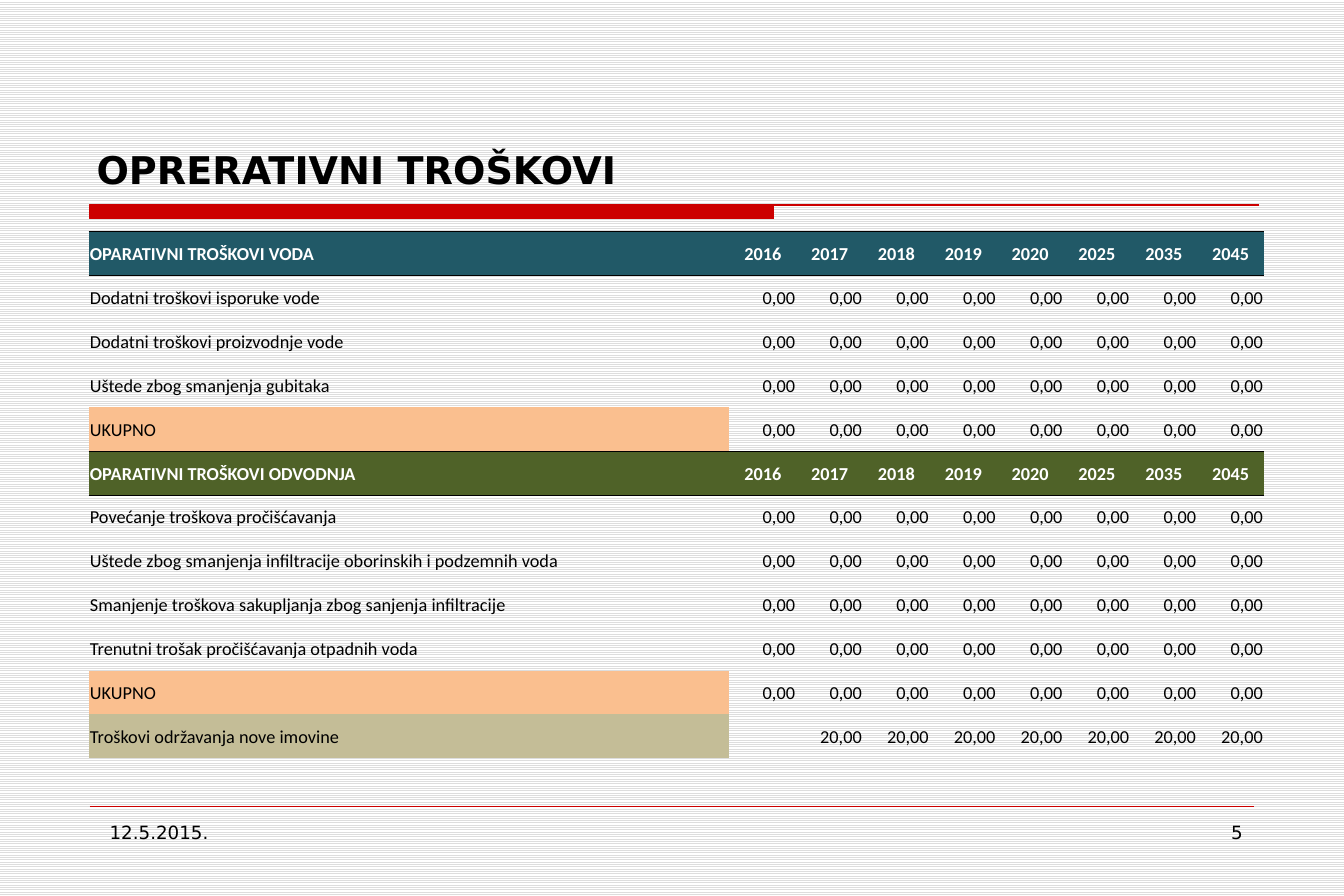
from lxml.etree import SubElement as Sub
from pptx import Presentation as Deck
from pptx.dml.color import RGBColor as Rgb
from pptx.enum.dml import MSO_PATTERN as Pat
from pptx.enum.shapes import MSO_CONNECTOR as Conn
from pptx.enum.text import MSO_ANCHOR as Anchor, PP_ALIGN as Align
from pptx.oxml import parse_xml
from pptx.oxml.ns import nsdecls, qn
from pptx.util import Inches, Pt

WIDE, HIGH = Inches(11.25), Inches(7.5)
HUES = {
    "black": "000000", "white": "FFFFFF", "grey": "DDDDDD", "red": "CC0000",
    "teal": "215967", "green": "4F6228", "peach": "FABF8F", "sand": "C4BD97",
}
SANS, BODY = "DejaVu Sans", "Calibri"

YEARS = ["2016", "2017", "2018", "2019", "2020", "2025", "2035", "2045"]
ZEROS = ["0,00"] * len(YEARS)
COSTS = [""] + ["20,00"] * (len(YEARS) - 1)
# Label, values, fill of the label; a header fills its whole row
ROWS = [
    ("OPARATIVNI TROŠKOVI VODA", YEARS, "teal"),
    ("Dodatni troškovi isporuke vode", ZEROS, None),
    ("Dodatni troškovi proizvodnje vode", ZEROS, None),
    ("Uštede zbog smanjenja gubitaka", ZEROS, None),
    ("UKUPNO", ZEROS, "peach"),
    ("OPARATIVNI TROŠKOVI ODVODNJA", YEARS, "green"),
    ("Povećanje troškova pročišćavanja", ZEROS, None),
    ("Uštede zbog smanjenja infiltracije oborinskih i podzemnih voda", ZEROS, None),
    ("Smanjenje troškova sakupljanja zbog sanjenja infiltracije", ZEROS, None),
    ("Trenutni trošak pročišćavanja otpadnih voda", ZEROS, None),
    ("UKUPNO", ZEROS, "peach"),
    ("Troškovi održavanja nove imovine", COSTS, "sand"),
]


def hue(name):
    return Rgb.from_string(HUES[name])


def area(left, top, width, height):
    """Turn percentages of the slide into lengths."""
    return [round(part * side / 100) for part, side in
            zip((left, top, width, height), (WIDE, HIGH, WIDE, HIGH))]


def apply(item, form):
    for key, value in form.items():
        setattr(item, key, value)


def write(frame, text, size, face, color="black", bold=False, align=Align.LEFT):
    para = frame.paragraphs[0]
    para.alignment = align
    run = para.add_run()
    run.text = text
    apply(run.font, {"size": Pt(size), "name": face, "bold": bold})
    run.font.color.rgb = hue(color)


def label(slide, box, text, size, anchor=Anchor.TOP, **form):
    frame = slide.shapes.add_textbox(*box).text_frame
    apply(frame, {"word_wrap": True, "vertical_anchor": anchor})
    write(frame, text, size, SANS, **form)


def rule(slide, box):
    """Thick bar that runs on as a thin line."""
    left, top, width, height = box
    bar = round(width * 0.585)
    pen = slide.shapes.build_freeform(left, top)
    pen.add_line_segments([(left + bar, top), (left + bar, top + height),
                           (left, top + height)])
    pen.move_to(left, top)
    pen.add_line_segments([(left + width, top)], close=False)
    shape = pen.convert_to_shape()
    shape.shadow.inherit = False
    shape.fill.solid()
    shape.fill.fore_color.rgb = hue("red")
    shape.line.color.rgb = hue("red")
    shape.line.width = Pt(0.75)


def border(cell, sides):
    """Draw the named sides in black and clear the others."""
    props = cell._tc.get_or_add_tcPr()
    for spot, side in enumerate("LRTB"):
        line = parse_xml(f'<a:ln{side} {nsdecls("a")} w="6350"/>')
        if side in sides:
            fill = Sub(line, qn("a:solidFill"))
            Sub(fill, qn("a:srgbClr"), val=HUES["black"])
        else:
            Sub(line, qn("a:noFill"))
        props.insert(spot, line)


def grid(slide, box):
    left, top, width, height = box
    table = slide.shapes.add_table(len(ROWS), len(YEARS) + 1, *box).table
    apply(table, {"first_row": False, "horz_banding": False})
    first = round(width * 0.545)
    for col, column in enumerate(table.columns):
        column.width = round((width - first) / len(YEARS)) if col else first
    heads = [values is YEARS for _, values, _ in ROWS]
    pad = Inches(0.01)
    edge = {"margin_left": pad, "margin_right": pad, "margin_top": pad,
            "margin_bottom": 0, "vertical_anchor": Anchor.MIDDLE}

    for num, (name, values, tint) in enumerate(ROWS):
        head = heads[num]
        table.rows[num].height = round(height / len(ROWS))
        sides = "T" if head or any(heads[max(num - 1, 0):num]) else ""
        sides += "B" if head or any(heads[num + 1:num + 2]) else ""
        for col, text in enumerate([name, *values]):
            cell = table.cell(num, col)
            apply(cell, edge)
            align = Align.LEFT if col == 0 else Align.CENTER if head else Align.RIGHT
            write(cell.text_frame, text, 11, BODY,
                  "white" if head else "black", head, align)
            if tint and (head or col == 0):
                cell.fill.solid()
                cell.fill.fore_color.rgb = hue(tint)
            else:
                cell.fill.background()
            border(cell, sides)


def foot(slide, box):
    """Thin line above the date and the page number."""
    left, top, width, height = box
    line = slide.shapes.add_connector(Conn.STRAIGHT, left, top, left + width, top)
    line.line.color.rgb = hue("red")
    line.line.width = Pt(0.25)
    Sub(line._element.spPr, qn("a:effectLst"))
    gap, inset, part = height * 0.13, width * 0.01, width * 0.25
    for start, text, align in [(left + inset * 0.7, "12.5.2015.", Align.LEFT),
                               (left + width - part, "5", Align.RIGHT)]:
        place = [round(v) for v in (start, top + gap, part, height - gap)]
        label(slide, place, text, 11, align=align)


def main():
    deck = Deck()
    apply(deck, {"slide_width": WIDE, "slide_height": HIGH})
    slide = deck.slides.add_slide(deck.slide_layouts[6])

    # Striped background
    back = slide.background.fill
    back.patterned()
    back.pattern = Pat.LIGHT_HORIZONTAL
    back.fore_color.rgb = hue("grey")
    back.back_color.rgb = hue("white")

    # Rule, title, table and footer
    rule(slide, area(6.67, 22.87, 87.02, 1.55))
    label(slide, area(6.31, 4.4, 87.47, 17.73), "OPRERATIVNI TROŠKOVI", 23,
          Anchor.BOTTOM, bold=True)
    grid(slide, area(6.6, 25.87, 87.47, 58.8))
    foot(slide, area(6.67, 90, 86.67, 8))
    deck.save("out.pptx")


if __name__ == "__main__":
    main()
